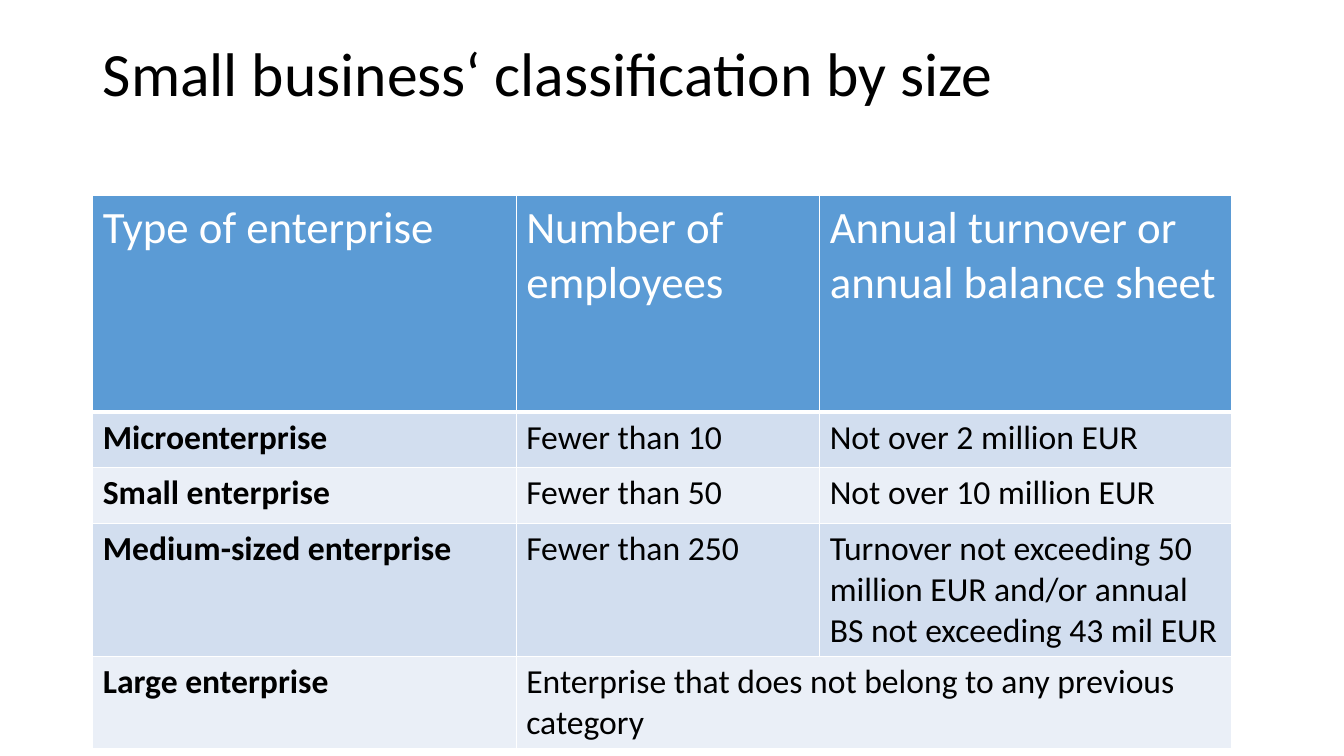
from lxml.etree import SubElement
from pptx import Presentation
from pptx.dml.color import RGBColor
from pptx.enum.text import MSO_ANCHOR, PP_ALIGN
from pptx.oxml.ns import qn
from pptx.util import Inches, Pt

COLUMN_WIDTHS = [4.2, 3.01, 4.09]
ROW_HEIGHTS = [2.15, 0.55, 0.55, 0.55, 0.55]
ENTERPRISES = [
    ["Type of enterprise", "Number of employees", "Annual turnover or annual balance sheet"],
    ["Microenterprise", "Fewer than 10", "Not over 2 million EUR"],
    ["Small enterprise", "Fewer than 50", "Not over 10 million EUR"],
    ["Medium-sized enterprise", "Fewer than 250",
     "Turnover not exceeding 50 million EUR and/or annual BS not exceeding 43 mil EUR"],
    ["Large enterprise", "Enterprise that does not belong to any previous category"],
]
HEADER_FILL = "5B9BD5"
BAND_FILLS = ["EAEFF7", "D2DEEF"]
WHITE = "FFFFFF"
BLACK = "000000"


def colour(value):
    return RGBColor.from_string(value)


def add_span(para, text, size, ink, bold=False):
    span = para.add_run()
    span.text = text
    span.font.name = "Calibri"
    span.font.size = Pt(size)
    span.font.bold = bold
    span.font.color.rgb = colour(ink)


def add_title(page, text):
    title = page.shapes.title
    title.left, title.top = Inches(0.92), Inches(0.4)
    title.width, title.height = Inches(11.5), Inches(1.45)
    title.text_frame.vertical_anchor = MSO_ANCHOR.MIDDLE
    para = title.text_frame.paragraphs[0]
    para.alignment = PP_ALIGN.LEFT
    para.line_spacing = 0.9
    add_span(para, text, 44, BLACK)
    para.add_line_break()


def set_borders(cell, bottom_width):
    properties = cell._tc.get_or_add_tcPr()
    for side, width in zip("LRTB", [1, 1, 1, bottom_width]):
        line = SubElement(properties, qn(f"a:ln{side}"), w=str(Pt(width)))
        fill = SubElement(line, qn("a:solidFill"))
        SubElement(fill, qn("a:srgbClr"), val=WHITE)


def style_cell(cell, row, column):
    header = row == 0
    set_borders(cell, 3 if header else 1)
    cell.fill.solid()
    cell.fill.fore_color.rgb = colour(HEADER_FILL if header else BAND_FILLS[row % 2])
    if column < len(ENTERPRISES[row]):
        add_span(cell.text_frame.paragraphs[0], ENTERPRISES[row][column],
                 32 if header else 24, WHITE if header else BLACK,
                 bold=not header and column == 0)


def add_enterprise_table(page):
    frame = page.shapes.add_table(
        len(ROW_HEIGHTS), len(COLUMN_WIDTHS), Inches(0.92), Inches(1.94),
        Inches(sum(COLUMN_WIDTHS)), Inches(sum(ROW_HEIGHTS)))
    table = frame.table
    for column, width in zip(table.columns, COLUMN_WIDTHS):
        column.width = Inches(width)
    for row, height in enumerate(ROW_HEIGHTS):
        table.rows[row].height = Inches(height)
        for column in range(len(COLUMN_WIDTHS)):
            style_cell(table.cell(row, column), row, column)
    table.cell(4, 1).merge(table.cell(4, 2))


def main():
    deck = Presentation()
    deck.slide_width, deck.slide_height = Inches(13.33), Inches(7.5)
    page = deck.slides.add_slide(deck.slide_layouts[5])
    add_title(page, "Small business‘ classification by size")
    add_enterprise_table(page)
    deck.save("out.pptx")


if __name__ == "__main__":
    main()
